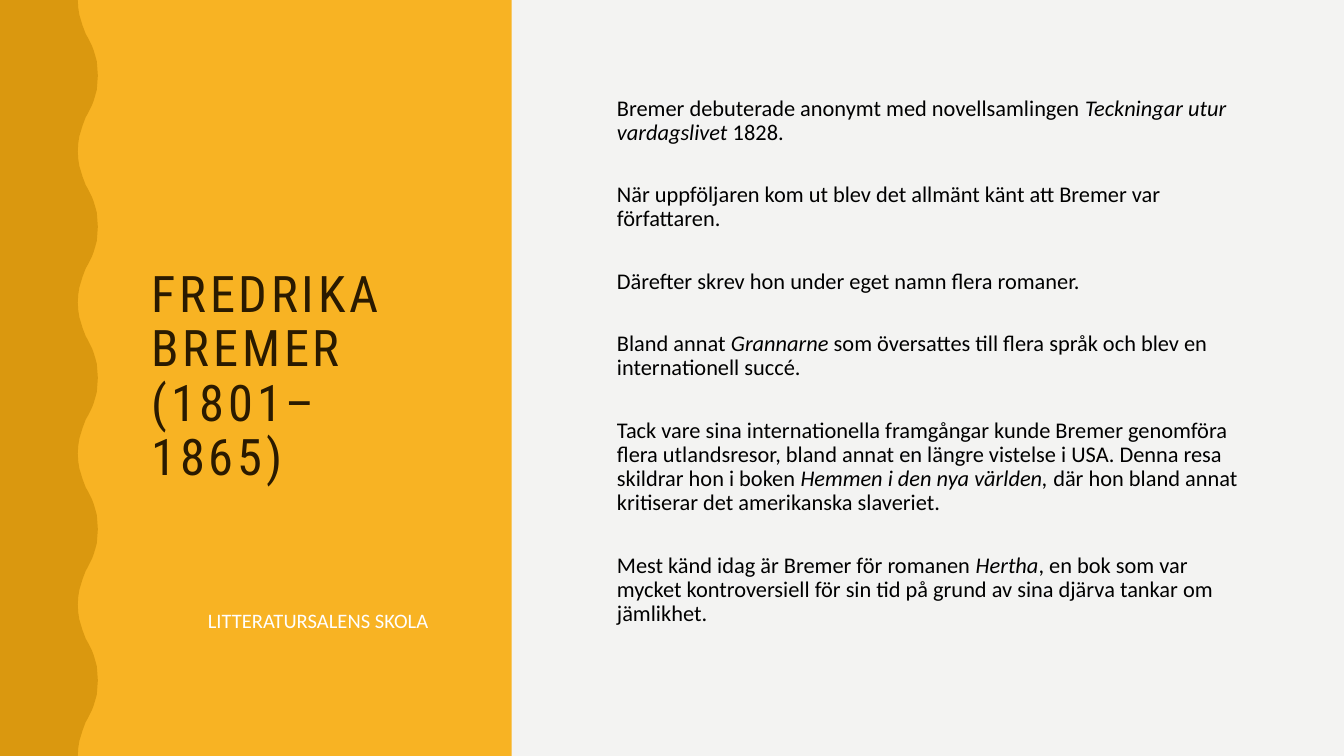
from lxml import etree
from pptx import Presentation
from pptx.dml.color import RGBColor
from pptx.enum.shapes import MSO_SHAPE
from pptx.enum.text import MSO_ANCHOR, PP_ALIGN
from pptx.oxml.ns import qn
from pptx.util import Cm, Pt

RECTANGLE = MSO_SHAPE.RECTANGLE
TOP, MIDDLE = MSO_ANCHOR.TOP, MSO_ANCHOR.MIDDLE
LEFT, RIGHT = PP_ALIGN.LEFT, PP_ALIGN.RIGHT

PAPER = RGBColor(0xF3, 0xF3, 0xF2)
AMBER = RGBColor(0xF8, 0xB3, 0x23)
OCHRE = RGBColor(0xCE, 0x8D, 0x07)
BROWN = RGBColor(0x2A, 0x1A, 0x00)
BLACK = RGBColor(0x00, 0x00, 0x00)
WHITE = RGBColor(0xFF, 0xFF, 0xFF)

SLIDE_WIDTH, SLIDE_HEIGHT = 25.4, 14.29
WAVE_COUNT = 5
WAVE_HEIGHT = SLIDE_HEIGHT / WAVE_COUNT
HALF_WAVE = [
    (1.47, 0), (1.48, 0.15), (1.5, 0.28), (1.53, 0.38), (1.56, 0.48),
    (1.59, 0.56), (1.62, 0.64), (1.66, 0.71), (1.7, 0.79), (1.74, 0.87),
    (1.77, 0.95), (1.8, 1.05), (1.83, 1.16), (1.84, 1.29), (1.85, 1.43),
]

TITLE = [[("FREDRIKA BREMER (1801–1865)", False)]]
FOOTER = [[("LITTERATURSALENS SKOLA", False)]]
BIOGRAPHY = [
    [("Bremer debuterade anonymt med novellsamlingen ", False),
     ("Teckningar utur vardagslivet", True), (" 1828.", False)],
    [("När uppföljaren kom ut blev det allmänt känt att Bremer var författaren.", False)],
    [("Därefter skrev hon under eget namn flera romaner.", False)],
    [("Bland annat ", False), ("Grannarne", True),
     (" som översattes till flera språk och blev en internationell succé.", False)],
    [("Tack vare sina internationella framgångar kunde Bremer genomföra flera "
      "utlandsresor, bland annat en längre vistelse i USA. Denna resa skildrar hon "
      "i boken ", False),
     ("Hemmen i den nya världen,", True),
     (" där hon bland annat kritiserar det amerikanska slaveriet.", False)],
    [("Mest känd idag är Bremer för romanen ", False), ("Hertha", True),
     (", en bok som var mycket kontroversiell för sin tid på grund av sina djärva "
      "tankar om jämlikhet.", False)],
]


def paint(shape, color):
    """Give a shape a flat fill without outline or shadow."""
    shape.shadow.inherit = False
    shape.fill.solid()
    shape.fill.fore_color.rgb = color
    shape.line.fill.background()


def add_panel(slide, width):
    """Add the full-height colour panel at the left edge."""
    panel = slide.shapes.add_shape(RECTANGLE, 0, 0, Cm(width), Cm(SLIDE_HEIGHT))
    paint(panel, AMBER)


def add_wavy_edge(slide, opacity):
    """Add the translucent band whose right side repeats one wave."""
    wave = HALF_WAVE + [(x, WAVE_HEIGHT - y) for x, y in reversed(HALF_WAVE[:-1])]
    edge = [(Cm(x), Cm(y + i * WAVE_HEIGHT)) for i in range(WAVE_COUNT) for x, y in wave]
    builder = slide.shapes.build_freeform(0, 0)
    builder.add_line_segments(edge + [(0, Cm(SLIDE_HEIGHT))], close=True)
    band = builder.convert_to_shape()
    paint(band, OCHRE)
    color = band.fill._xPr.find(qn("a:solidFill"))[0]
    etree.SubElement(color, qn("a:alpha")).set("val", str(opacity * 1000))


def add_text(slide, box, paragraphs, font, size, color, anchor=MIDDLE,
             align=LEFT, gap=0, inset=0.25, tracking=0):
    """Add a wrapped text box of paragraphs made of (text, italic) runs."""
    frame = slide.shapes.add_textbox(*map(Cm, box)).text_frame
    frame.word_wrap = True
    frame.vertical_anchor = anchor
    frame.margin_left = frame.margin_right = Cm(inset)
    frame.margin_top = frame.margin_bottom = Cm(inset)
    for index, runs in enumerate(paragraphs):
        paragraph = frame.add_paragraph() if index else frame.paragraphs[0]
        paragraph.alignment = align
        paragraph.line_spacing = 0.9
        paragraph.space_before = Pt(gap if index else 0)
        paragraph.font.name = font
        paragraph.font.size = Pt(size)
        paragraph.font.color.rgb = color
        for text, italic in runs:
            run = paragraph.add_run()
            run.text = text
            if italic:
                run.font.italic = True
            if tracking:
                run._r.get_or_add_rPr().set("spc", str(tracking * 100))


def main():
    """Build the author slide and save it."""
    deck = Presentation()
    deck.slide_width, deck.slide_height = Cm(SLIDE_WIDTH), Cm(SLIDE_HEIGHT)
    slide = deck.slides.add_slide(deck.slide_layouts[6])
    slide.background.fill.solid()
    slide.background.fill.fore_color.rgb = PAPER
    add_panel(slide, 9.67)
    add_text(slide, (2.62, 2.24, 6.07, 9.8), TITLE, "Roboto Condensed", 27, BROWN,
             tracking=2)
    add_wavy_edge(slide, 70)
    add_text(slide, (11.66, 1.83, 11.92, 10.1), BIOGRAPHY, "Calibri", 12, BLACK,
             anchor=TOP, gap=20.5, inset=0)
    add_text(slide, (0.91, 10.34, 7.44, 2.82), FOOTER, "Calibri", 11, WHITE, align=RIGHT)
    deck.save("out.pptx")


if __name__ == "__main__":
    main()
